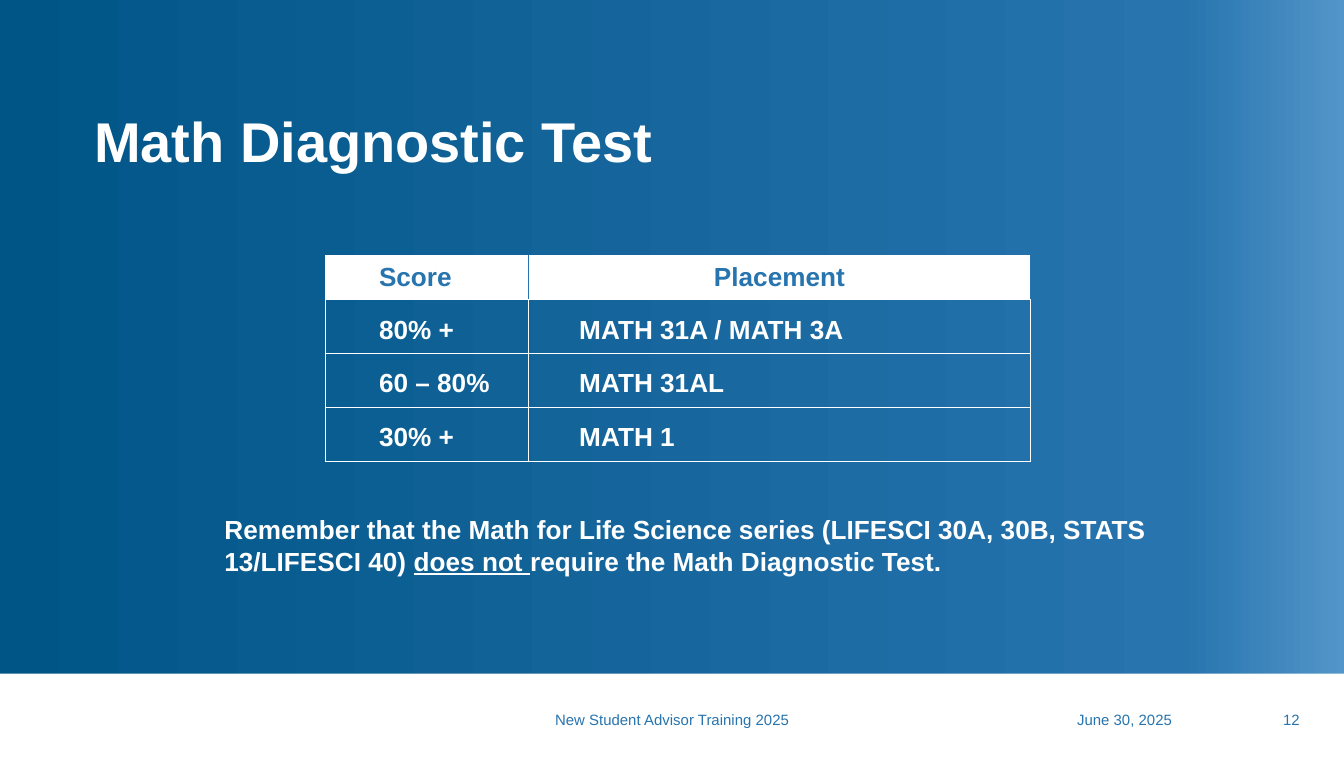
from copy import deepcopy

from lxml import etree
from pptx import Presentation
from pptx.dml.color import RGBColor
from pptx.enum import shapes, text
from pptx.oxml.ns import qn
from pptx.util import Inches, Pt

WHITE, BLUE = "FFFFFF", "2774AE"
GRADIENT = [(0, "005587"), (0.88, BLUE), (1, "5295C9")]
ROWS = [("Score", "Placement"), ("80% +", "MATH 31A / MATH 3A"),
        ("60 – 80%", "MATH 31AL"), ("30% +", "MATH 1")]
NOTE = [
    ("Remember that the Math for Life Science series "
     "(LIFESCI 30A, 30B, STATS 13/LIFESCI 40) ", False),
    ("does not ", True),
    ("require the Math Diagnostic Test.", False),
]


def rgb(value):
    return RGBColor.from_string(value)


def apply(obj, **values):
    for name, value in values.items():
        setattr(obj, name, value)


def set_margins(obj, left, top, right, bottom):
    apply(obj, margin_left=Inches(left), margin_top=Inches(top),
          margin_right=Inches(right), margin_bottom=Inches(bottom))


def add_run(p, words, size, color, **font):
    r = p.add_run()
    r.text = words
    apply(r.font, name="Arial", size=Pt(size), **font)
    r.font.color.rgb = rgb(color)


def add_text_box(slide, box, margins, anchor):
    """Add an empty text box and return its first paragraph."""
    tf = slide.shapes.add_textbox(*map(Inches, box)).text_frame
    apply(tf, word_wrap=True, vertical_anchor=anchor)
    set_margins(tf, *margins)
    return tf.paragraphs[0]


def paint_background(slide):
    fill = slide.background.fill
    fill.gradient()
    fill.gradient_angle = 0
    stop_list = next(slide.element.iter(qn("a:gsLst")))
    stop_list.append(deepcopy(stop_list[-1]))
    for stop, (position, color) in zip(fill.gradient_stops, GRADIENT):
        stop.position = position
        stop.color.rgb = rgb(color)


def add_title(slide, box):
    sp = slide.shapes.title
    left, top, width, height = map(Inches, box)
    apply(sp, left=left, top=top, width=width, height=height)
    tf = sp.text_frame
    apply(tf, word_wrap=True, vertical_anchor=text.MSO_ANCHOR.TOP,
          auto_size=text.MSO_AUTO_SIZE.NONE)
    p = tf.paragraphs[0]
    apply(p, alignment=text.PP_ALIGN.LEFT, line_spacing=0.9)
    add_run(p, "Math Diagnostic Test", 30, WHITE, bold=True)


def set_borders(cell, colors):
    """Draw the left, right, top and bottom borders, in that order."""
    tc_pr = cell._tc.get_or_add_tcPr()
    for i, (side, color) in enumerate(zip("LRTB", colors)):
        ln = etree.Element(qn(f"a:ln{side}"), w=str(Pt(0.5)))
        solid = etree.SubElement(ln, qn("a:solidFill"))
        etree.SubElement(solid, qn("a:srgbClr"), val=color)
        tc_pr.insert(i, ln)


def fill_cell(cell, words, header, placement):
    cell.vertical_anchor = text.MSO_ANCHOR.MIDDLE
    set_margins(cell, 0 if placement else 0.4, 0 if header else 0.05, 0, 0)
    p = cell.text_frame.paragraphs[0]
    if header:
        cell.fill.solid()
        cell.fill.fore_color.rgb = rgb(WHITE)
        set_borders(cell, (BLUE if placement else WHITE, BLUE, WHITE, WHITE))
    else:
        cell.fill.background()
        set_borders(cell, [WHITE] * 4)
    if placement and header:
        p.alignment = text.PP_ALIGN.CENTER
    elif placement:
        p.level = 1
        p._p.get_or_add_pPr().set("marL", str(Inches(0.38)))
    add_run(p, words, 14, BLUE if header else WHITE, bold=True)


def add_score_table(slide, box):
    frame = slide.shapes.add_table(len(ROWS), 2, *map(Inches, box))
    table = frame.table
    apply(table, first_row=False, horz_banding=False)
    score_width = Inches(1.51)
    table.columns[0].width = score_width
    table.columns[1].width = Inches(box[2]) - score_width
    for i, row in enumerate(ROWS):
        table.rows[i].height = Inches(0.4 if i else 0.33)
        for j, words in enumerate(row):
            fill_cell(table.cell(i, j), words, header=i == 0, placement=j == 1)


def add_note(slide, box):
    p = add_text_box(slide, box, (0.5, 0, 0, 0), text.MSO_ANCHOR.TOP)
    for words, underline in NOTE:
        add_run(p, words, 14, WHITE, bold=True, underline=underline)


def add_footer(slide, box):
    band = slide.shapes.add_shape(shapes.MSO_SHAPE.RECTANGLE, *map(Inches, box))
    band.shadow.inherit = False
    band.fill.solid()
    band.fill.fore_color.rgb = rgb(WHITE)
    band.line.fill.background()
    left, top = box[:2]
    items = [
        ("New Student Advisor Training 2025", 4.13, 1.87, 0, text.PP_ALIGN.LEFT),
        ("June 30, 2025", 7.32, 1.5, 0.1, text.PP_ALIGN.RIGHT),
        ("12", 8.9, 0.87, 0.1, text.PP_ALIGN.RIGHT),
    ]
    for words, x, width, inset, alignment in items:
        p = add_text_box(slide, (left + x, top + 0.27, width, 0.15),
                         (inset, 0.01, 0.1, 0.01), text.MSO_ANCHOR.BOTTOM)
        p.alignment = alignment
        add_run(p, words, 8, BLUE)


def main():
    prs = Presentation()
    apply(prs, slide_width=Inches(10), slide_height=Inches(5.63))
    slide = prs.slides.add_slide(prs.slide_layouts[5])
    paint_background(slide)
    add_footer(slide, (0, 5.01, 10, 0.62))
    add_title(slide, (0.6, 0.8, 8, 0.56))
    add_score_table(slide, (2.42, 1.9, 5.25, 1.53))
    add_note(slide, (1.17, 3.82, 7.96, 0.47))
    prs.save("out.pptx")


if __name__ == "__main__":
    main()
